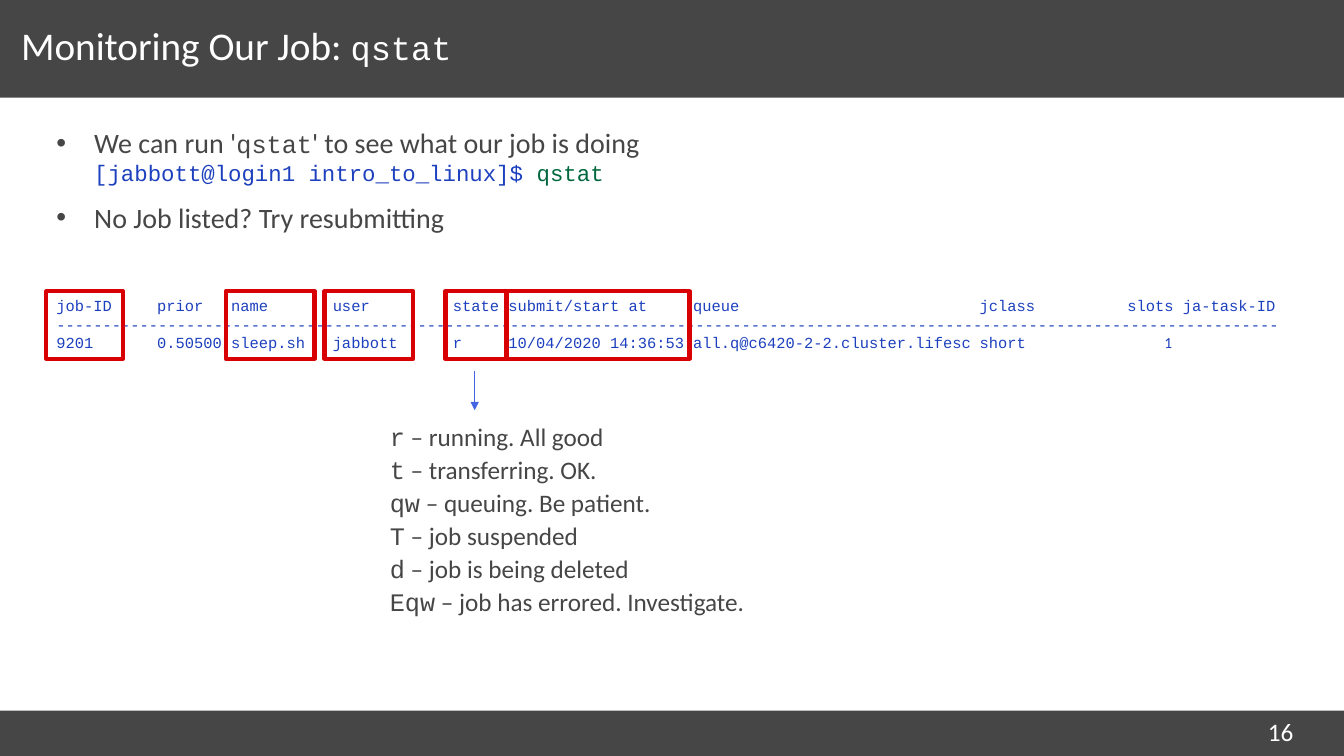
import copy

import pptx
import pptx.dml.color
import pptx.enum.dml
import pptx.enum.shapes
import pptx.enum.text
import pptx.oxml
import pptx.oxml.ns
import pptx.util
from lxml import etree

Pt = pptx.util.Pt
qn = pptx.oxml.ns.qn

COLORS = {"dark": "464646", "white": "FFFFFF", "blue": "1D40BE",
          "green": "00683E", "red": "D80003", "arrow": "4365E2"}
SANS, MONO = "Calibri", "Courier New"

# Listing columns: first stop in points, then offsets in characters
FIRST_STOP, CHAR_WIDTH = 72, 6.6
COLUMNS = [0, 8, 19, 32, 38, 58, 89, 105, 109, 111]
LISTING = "\n".join([
    "job-ID\tprior\tname\tuser\tstate\tsubmit/start at\tqueue\tjclass\tslots\tja-task-ID",
    "-" * 132,
    "9201\t0.50500\tsleep.sh\tjabbott\tr\t10/04/2020 14:36:53"
    "\tall.q@c6420-2-2.cluster.lifesc\tshort\t\t",
])
STATES = [("r", "running. All good"), ("t", "transferring. OK."),
          ("qw", "queuing. Be patient."), ("T", "job suspended"),
          ("d", "job is being deleted"), ("Eqw", "job has errored. Investigate.")]


def rgb(name):
    return pptx.dml.color.RGBColor.from_string(COLORS[name])


def add_text(p, text, size=18, font=SANS, color="dark"):
    """Add a formatted run for each line, with line breaks between them."""
    for i, line in enumerate(text.split("\n")):
        if i:
            p.add_line_break()
            p._p[-1].append(copy.deepcopy(r._r.rPr))
        r = p.add_run()
        r.text = line
        r.font.size = Pt(size)
        r.font.name = font
        r.font.color.rgb = rgb(color)


def add_box(s, left, top, width, height, inset=0, anchor="TOP"):
    tf = s.shapes.add_textbox(Pt(left), Pt(top), Pt(width), Pt(height)).text_frame
    tf.word_wrap = True
    tf.margin_left = tf.margin_right = Pt(inset)
    tf.margin_top = tf.margin_bottom = Pt(3.6)
    tf.vertical_anchor = getattr(pptx.enum.text.MSO_ANCHOR, anchor)
    return tf


def add_rect(s, left, top, width, height, fill=None, line=None):
    sp = s.shapes.add_shape(pptx.enum.shapes.MSO_SHAPE.RECTANGLE,
                            Pt(left), Pt(top), Pt(width), Pt(height))
    sp.shadow.inherit = False
    if fill:
        sp.fill.solid()
        sp.fill.fore_color.rgb = rgb(fill)
    else:
        sp.fill.background()
    if line:
        sp.line.color.rgb = rgb(line)
        sp.line.width = Pt(3)
    else:
        sp.line.fill.background()


def add_arrow(s, x, top, bottom):
    line = s.shapes.add_connector(pptx.enum.shapes.MSO_CONNECTOR.STRAIGHT,
                                  Pt(x), Pt(top), Pt(x), Pt(bottom))
    line.line.color.rgb = rgb("arrow")
    line.line.width = Pt(0.5)
    etree.SubElement(line.line._get_or_add_ln(), qn("a:tailEnd"), type="triangle")
    etree.SubElement(line._element.spPr, qn("a:effectLst"))


def set_bullet(p):
    pPr = p._p.get_or_add_pPr()
    pPr.set("marL", str(Pt(27)))
    pPr.set("indent", str(-Pt(27)))
    color = etree.SubElement(pPr, qn("a:buClr"))
    etree.SubElement(color, qn("a:srgbClr"), val=COLORS["dark"])
    etree.SubElement(pPr, qn("a:buFont"), typeface="Arial")
    etree.SubElement(pPr, qn("a:buChar"), char="•")


def set_tabs(p):
    tabs = etree.SubElement(p._p.get_or_add_pPr(), qn("a:tabLst"))
    for column in COLUMNS:
        etree.SubElement(tabs, qn("a:tab"), algn="l",
                         pos=str(Pt(FIRST_STOP + column * CHAR_WIDTH)))


def add_body(s):
    tf = add_box(s, 40.3, 86.4, 878.4, 408)
    run_qstat = tf.paragraphs[0]
    no_job, listing = tf.add_paragraph(), tf.add_paragraph()
    for p in (run_qstat, no_job):
        set_bullet(p)
        p.space_after = Pt(4)
    no_job.space_before = Pt(6)
    listing.space_before = Pt(40.4)
    set_tabs(listing)

    add_text(run_qstat, "We can run '", size=20)
    add_text(run_qstat, "qstat", font=MONO)
    add_text(run_qstat, "' to see what our job is doing\n", size=20)
    add_text(run_qstat, "[jabbott@login1 intro_to_linux]$ ", size=16, font=MONO, color="blue")
    add_text(run_qstat, "qstat", size=16, font=MONO, color="green")
    add_text(no_job, "No Job listed? Try resubmitting", size=20)
    add_text(listing, LISTING, size=11, font=MONO, color="blue")
    add_text(listing, "1", size=11, color="blue")


def add_states(s):
    p = add_box(s, 243.4, 295.2, 299.5, 151.2, inset=7.2).paragraphs[0]
    p._p.get_or_add_pPr().set("marL", str(Pt(28)))
    p.line_spacing = Pt(23.6)
    for i, (state, meaning) in enumerate(STATES):
        end = "\n" if i < len(STATES) - 1 else ""
        add_text(p, state, font=MONO)
        add_text(p, f" – {meaning}{end}")


def main():
    prs = pptx.Presentation()
    prs.slide_width, prs.slide_height = Pt(960), Pt(540)
    s = prs.slides.add_slide(prs.slide_layouts[6])

    # Header and footer bands
    add_rect(s, 0, 507.6, 960, 32.4, fill="dark")
    add_rect(s, 0, 0, 960, 69.8, fill="dark")

    # Title and page number
    p = add_box(s, 15.1, 12.2, 829.4, 46.1, anchor="MIDDLE").paragraphs[0]
    p.line_spacing = 0.8
    add_text(p, "Monitoring Our Job: ", size=28, color="white")
    add_text(p, "qstat", size=24, font=MONO, color="white")
    p = add_box(s, 898.6, 508.3, 50.4, 18, inset=7.2).paragraphs[0]
    add_text(p, "16", color="white")

    # Bullets and job listing
    add_body(s)

    # Highlighted columns
    for left, width in [(33.1, 54.7), (161.3, 63.4), (231.8, 63.4),
                        (318.2, 43.2), (362.2, 130.3)]:
        add_rect(s, left, 208.1, width, 48.2, line="red")

    # Meaning of the job states
    add_states(s)
    add_arrow(s, 339.1, 265, 293)

    prs.save("out.pptx")


if __name__ == "__main__":
    main()
